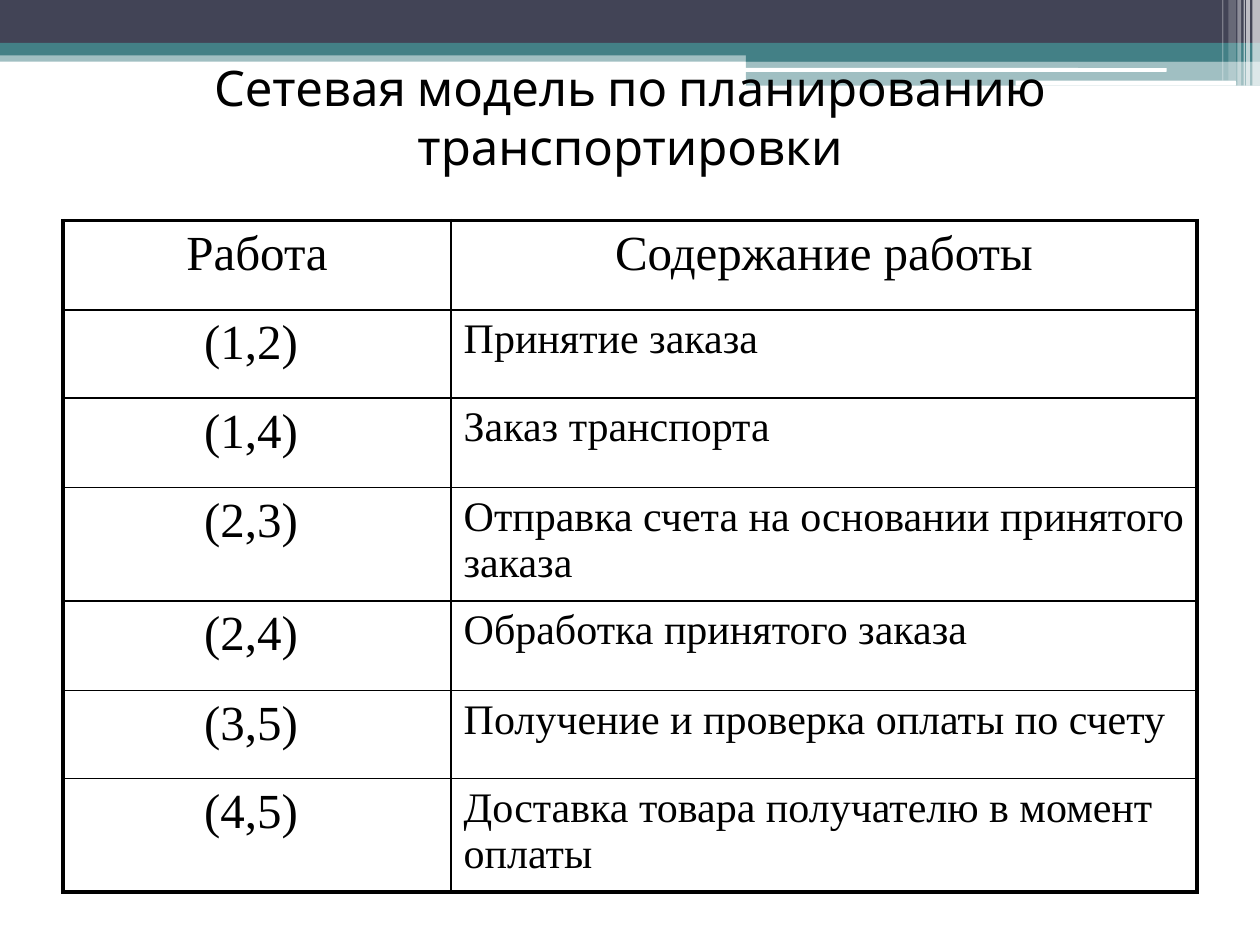
from lxml import etree
from pptx import Presentation
from pptx.dml.color import RGBColor
from pptx.enum.shapes import MSO_SHAPE
from pptx.enum.text import MSO_ANCHOR, PP_ALIGN
from pptx.oxml.ns import qn
from pptx.util import Inches, Pt

RECT, ROUND = MSO_SHAPE.RECTANGLE, MSO_SHAPE.ROUNDED_RECTANGLE
CENTER, LEFT = PP_ALIGN.CENTER, PP_ALIGN.LEFT
MIDDLE = MSO_ANCHOR.MIDDLE
COLORS = {"navy": "424456", "teal": "438086", "white": "FFFFFF", "black": "000000"}


def add_text(p, text, size, font, align):
    p.alignment = align
    r = p.add_run()
    r.text = text
    r.font.size = Pt(size)
    r.font.name = font
    r.font.color.rgb = RGBColor.from_string(COLORS["black"])


def add_border(cell, side, width):
    tcPr = cell._tc.get_or_add_tcPr()
    ln = etree.SubElement(tcPr, qn(f"a:ln{side}"), w=str(Pt(width)))
    fill = etree.SubElement(ln, qn("a:solidFill"))
    etree.SubElement(fill, qn("a:srgbClr"), val=COLORS["black"])


prs = Presentation()
prs.slide_width, prs.slide_height = Inches(10), Inches(7.5)
s = prs.slides.add_slide(prs.slide_layouts[5])

bars = [
    (RECT, 0, 0.4, 10, 0.09, "teal", 50),
    (RECT, 0, 0, 10, 0.34, "navy", 100),
    (RECT, 0, 0.34, 10, 0.1, "teal", 100),
    (RECT, 5.92, 0.39, 4.08, 0.1, "teal", 100),
    (RECT, 5.92, 0.48, 4.08, 0.2, "teal", 50),
    (ROUND, 5.91, 0.54, 3.35, 0.03, "white", 100),
    (ROUND, 8.06, 0.64, 1.75, 0.04, "white", 100),
    (RECT, 9.94, 0, 0.06, 0.68, "white", 65),
    (RECT, 9.89, 0, 0.03, 0.68, "white", 65),
    (RECT, 9.87, 0, 0.01, 0.68, "white", 60),
    (RECT, 9.82, 0, 0.03, 0.68, "white", 40),
    (RECT, 9.75, 0, 0.06, 0.64, "white", 20),
    (RECT, 9.7, 0, 0.01, 0.64, "white", 30),
]
for kind, x, y, w, h, color, opacity in bars:
    sp = s.shapes.add_shape(kind, Inches(x), Inches(y), Inches(w), Inches(h))
    sp.shadow.inherit = False
    sp.line.fill.background()
    sp.fill.solid()
    sp.fill.fore_color.rgb = RGBColor.from_string(COLORS[color])
    if opacity < 100:
        clr = sp.element.spPr.find(qn("a:solidFill"))[0]
        etree.SubElement(clr, qn("a:alpha"), val=str(opacity * 1000))

title = s.shapes.title
title.left, title.top = Inches(0.5), Inches(0.3)
title.width, title.height = Inches(9), Inches(1.25)
tf = title.text_frame
tf.word_wrap = True
tf.vertical_anchor = MIDDLE
add_text(tf.paragraphs[0], "Сетевая модель по планированию транспортировки", 28, "Cabin", CENTER)
s.shapes.element.append(title.element)

rows = [
    ("Работа", "Содержание работы", 0.71),
    ("(1,2) ", "Принятие заказа", 0.7),
    ("(1,4) ", "Заказ транспорта", 0.71),
    ("(2,3) ", "Отправка счета на основании принятого заказа", 0.9),
    ("(2,4) ", "Обработка принятого заказа", 0.71),
    ("(3,5) ", "Получение и проверка оплаты по счету", 0.7),
    ("(4,5) ", "Доставка товара получателю в момент оплаты", 0.9),
]
frame = s.shapes.add_table(len(rows), 2, Inches(0.5), Inches(1.75), Inches(9), Inches(5.34))
table = frame.table
table.first_row = False
table.horz_banding = False
table.columns[0].width, table.columns[1].width = Inches(3.08), Inches(5.92)
last = len(rows) - 1
for i, (work, content, height) in enumerate(rows):
    table.rows[i].height = Inches(height)
    for j, text in enumerate((work, content)):
        cell = table.cell(i, j)
        description = i > 0 and j == 1
        add_text(cell.text_frame.paragraphs[0], text, 24 if description else 28,
                 "Times New Roman", LEFT if description else CENTER)
        outer = {"L": j == 0, "R": j == 1, "T": i == 0, "B": i == last}
        for side, thick in outer.items():
            add_border(cell, side, 2.25 if thick else 1)
        cell.fill.background()

prs.save("out.pptx")
